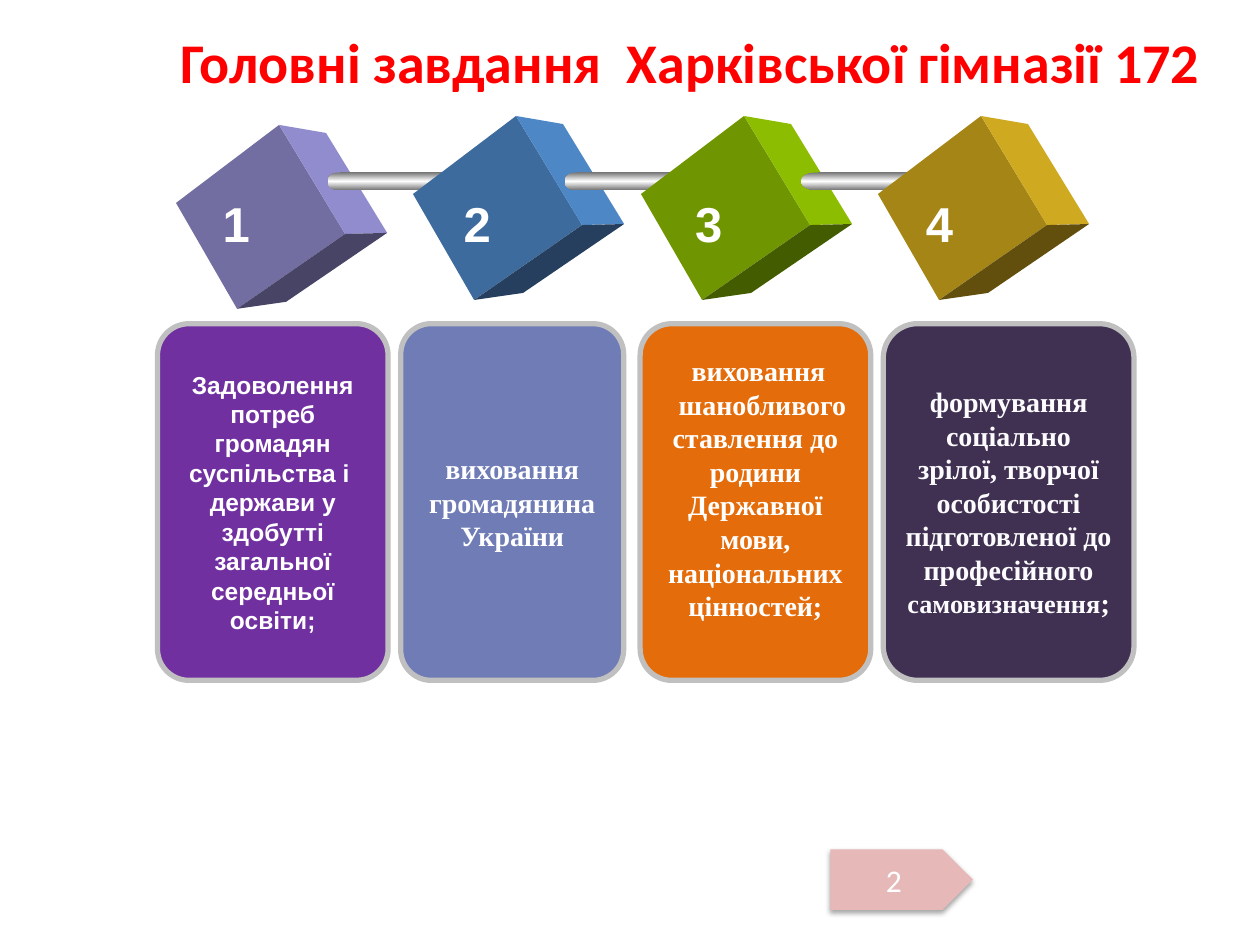
"""Build the slide of the four main tasks of the gymnasium."""
from copy import deepcopy
from dataclasses import dataclass

from lxml.etree import SubElement
from pptx import Presentation
from pptx.dml.color import RGBColor
from pptx.enum.shapes import MSO_SHAPE
from pptx.enum.text import MSO_ANCHOR, PP_ALIGN
from pptx.oxml.ns import qn
from pptx.util import Pt


@dataclass(frozen=True)
class Theme:
    heading: str = "Calibri"
    body: str = "Arial"
    serif: str = "Times New Roman"
    title_size: int = 32
    number_size: int = 28
    page_size: int = 18
    large: int = 16
    medium: int = 15
    small: int = 14
    red: str = "FF0000"
    white: str = "FFFFFF"
    soft_white: str = "FCFCFF"
    border: str = "C0C0C0"
    page: str = "E6B9B8"
    shadow: str = "000000"
    rod: tuple = ("767676", "FFFFFF", "767676")
    cards: tuple = ("7030A0", "6F7CB5", "E46C0A", "403152")
    cubes: tuple = (
        ("736EA1", "908CCD", "474465"),
        ("3D6B9D", "4D87C5", "263F5F"),
        ("6F9600", "8DBD00", "445C00"),
        ("A48515", "CFA91F", "634F0D"),
    )


THEME = Theme()
CUBE_FACES = (
    ((0, 44.6), (58.9, 0), (96.6, 62.3), (34.9, 105.1)),
    ((58.9, 0), (85.7, 4.6), (120.6, 61.7), (96.6, 62.3)),
    ((34.9, 105.1), (96.6, 62.3), (120.6, 61.7), (62.9, 101.1)),
)
CUBE_PLACES = ((100.6, 71.4), (236, 66.3), (366.3, 66.3), (501.7, 66.3))
NUMBER_LEFTS = (120.2, 257.8, 390.2, 522)
RODS = ((187.2, 12.2, 61.2), (322.6, 12.2, 61.2), (457.9, 16.6, 79.9))
ROD_TOP, ROD_HEIGHT = 98.6, 10.1
CARD_TOP, CARD_HEIGHT = 185, 203.8
CARD_SPANS = ((90, 131.8), (229, 127.4), (365.8, 131.8), (504.7, 143.3))


def add_run(p, text, font, size, color, bold=True):
    r = p.add_run()
    r.text = text
    r.font.name = font
    r.font.size = Pt(size)
    r.font.bold = bold
    r.font.color.rgb = RGBColor.from_string(color)


def add_label(s, box, text, font, size, color, align):
    sp = s.shapes.add_textbox(*map(Pt, box))
    tf = sp.text_frame
    tf.word_wrap = False
    p = tf.paragraphs[0]
    p.alignment = align
    add_run(p, text, font, size, color)


def add_filled(s, kind, box, color=None):
    sp = s.shapes.add_shape(kind, *map(Pt, box))
    sp.shadow.inherit = False
    sp.line.fill.background()
    if color:
        sp.fill.solid()
        sp.fill.fore_color.rgb = RGBColor.from_string(color)
    return sp


def add_cube(s, place, colors):
    left, top = place
    for face, color in zip(CUBE_FACES, colors):
        points = [(Pt(left + x), Pt(top + y)) for x, y in face]
        builder = s.shapes.build_freeform(*points[0])
        builder.add_line_segments(points[1:], close=True)
        sp = builder.convert_to_shape()
        sp.shadow.inherit = False
        sp.fill.solid()
        sp.fill.fore_color.rgb = RGBColor.from_string(color)
        sp.line.fill.background()


def fill_metal(sp):
    sp.fill.gradient()
    sp.fill.gradient_angle = 270
    stops = sp.element.spPr.find(".//" + qn("a:gsLst"))
    stops.append(deepcopy(stops[0]))
    for i, stop in enumerate(sp.fill.gradient_stops):
        stop.position = i / 2
        stop.color.rgb = RGBColor.from_string(THEME.rod[i])


def add_rod(s, left, cap, length):
    fill_metal(add_filled(s, MSO_SHAPE.OVAL, (left, ROD_TOP, cap, ROD_HEIGHT)))
    body = (left + cap * 0.57, ROD_TOP, length, ROD_HEIGHT)
    fill_metal(add_filled(s, MSO_SHAPE.RECTANGLE, body))


def add_card(s, span, color, paragraphs, bottom=3.6):
    left, width = span
    box = (left, CARD_TOP, width, CARD_HEIGHT)
    sp = add_filled(s, MSO_SHAPE.ROUNDED_RECTANGLE, box, color)
    sp.adjustments[0] = 0.137
    sp.line.color.rgb = RGBColor.from_string(THEME.border)
    sp.line.width = Pt(3)
    tf = sp.text_frame
    tf.word_wrap = True
    tf.vertical_anchor = MSO_ANCHOR.MIDDLE
    tf.margin_bottom = Pt(bottom)
    for i, runs in enumerate(paragraphs):
        p = tf.add_paragraph() if i else tf.paragraphs[0]
        p.alignment = PP_ALIGN.CENTER
        for run in runs:
            add_run(p, *run)


def add_page_number(s, text):
    sp = add_filled(s, MSO_SHAPE.PENTAGON, (474.5, 485.3, 81.4, 34.6), THEME.page)
    effects = sp.element.spPr.find(qn("a:effectLst"))
    shadow = SubElement(effects, qn("a:outerShdw"), blurRad=str(Pt(3.1)),
                        dist=str(Pt(1.8)), dir="5400000", rotWithShape="0")
    color = SubElement(shadow, qn("a:srgbClr"), val=THEME.shadow)
    SubElement(color, qn("a:alpha"), val="35000")
    tf = sp.text_frame
    tf.vertical_anchor = MSO_ANCHOR.MIDDLE
    p = tf.paragraphs[0]
    p.alignment = PP_ALIGN.CENTER
    add_run(p, text, THEME.heading, THEME.page_size, THEME.white, False)


def card_texts():
    t = THEME
    serif = (t.serif, t.large, t.white)
    soft = (t.serif, t.large, t.soft_white)
    return (
        [[("Задоволення потреб громадян суспільства і  держави у здобутті "
           "загальної середньої освіти;", t.body, t.small, t.white)]],
        [[("виховання громадянина України", *serif)]],
        [[(" ", t.serif, t.small, t.white), ("виховання", *serif)],
         [("  шанобливого ставлення до родини", *serif)],
         [("Державної мови, національних цінностей;", *serif)]],
        [[("формування соціально зрілої, творчої особистості підготовленої "
           "до професійного ", *soft),
          ("самовизначення", t.serif, t.medium, t.soft_white),
          (";", *serif)]],
    )


def main():
    prs = Presentation()
    prs.slide_width, prs.slide_height = Pt(720), Pt(540)
    s = prs.slides.add_slide(prs.slide_layouts[6])
    add_label(s, (92.9, 12.2, 610.6, 46.1),
              "Головні завдання  Харківської гімназії 172 ",
              THEME.heading, THEME.title_size, THEME.red, PP_ALIGN.CENTER)
    add_page_number(s, "2")
    for i, place in enumerate(CUBE_PLACES):
        add_cube(s, place, THEME.cubes[i])
        if i < len(RODS):
            add_rod(s, *RODS[i])
    for i, left in enumerate(NUMBER_LEFTS, 1):
        add_label(s, (left, 107.3, 30.2, 41), str(i), THEME.body,
                  THEME.number_size, THEME.white, PP_ALIGN.LEFT)
    bottoms = (3.6, 3.6, 19.6, 3.6)
    for card in zip(CARD_SPANS, THEME.cards, card_texts(), bottoms):
        add_card(s, *card)
    prs.save("out.pptx")


if __name__ == "__main__":
    main()
